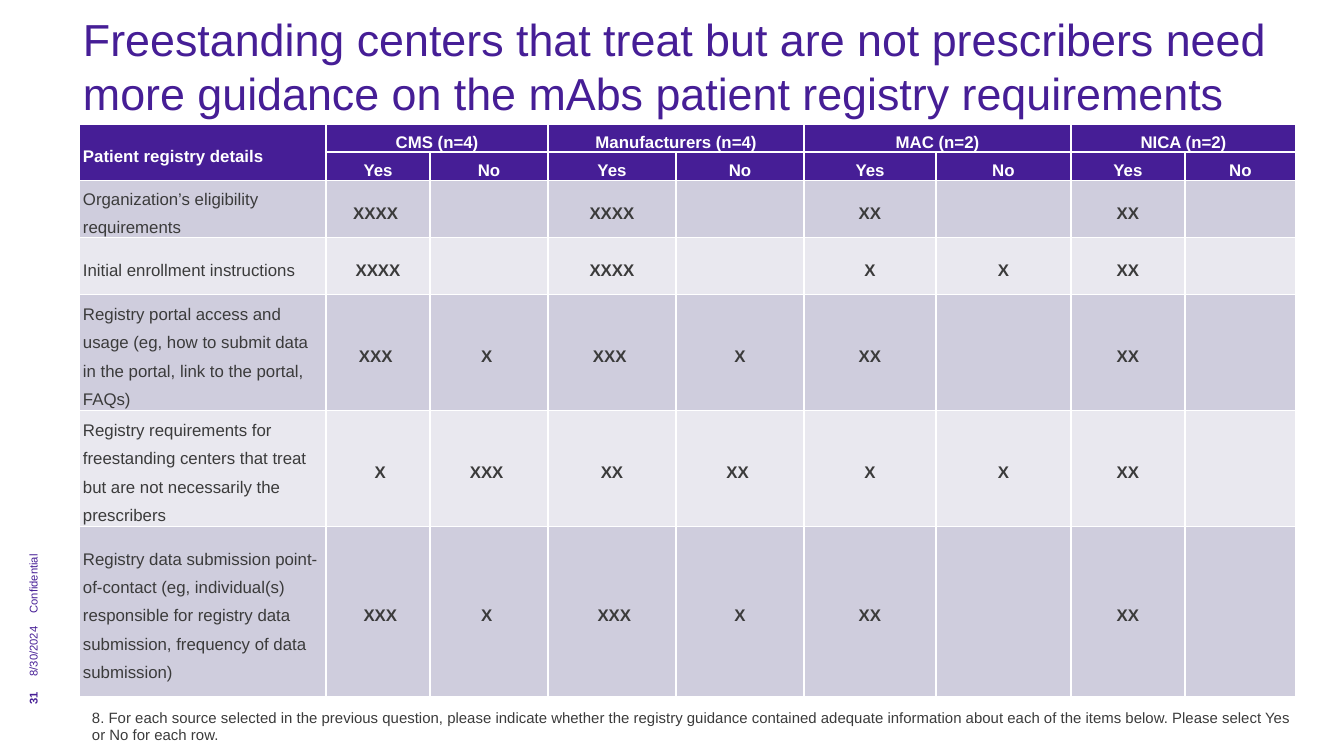
from lxml import etree
from pptx import Presentation
from pptx.dml.color import RGBColor
from pptx.enum import text
from pptx.oxml.ns import qn
from pptx.util import Pt

PX = 914400 / 134.4  # EMU in one px

THEME = {
    "font": "Arial",
    "purple": RGBColor.from_string("461E96"),
    "ink": RGBColor.from_string("3B3B3B"),
    "white": RGBColor.from_string("FFFFFF"),
    "bands": [RGBColor.from_string("CFCDDD"), RGBColor.from_string("E9E8EF")],
    "title": Pt(24), "cell": Pt(9), "note": Pt(8), "footer": Pt(6),
    "cell_line": Pt(15.1),
}


def px(n):
    return round(n * PX)


def write(tf, words, size, color, bold=False, **para):
    p = tf.paragraphs[0]
    for name, value in para.items():
        setattr(p, name, value)
    r = p.add_run()
    r.text = words
    r.font.color.rgb = color
    for name, value in {"name": THEME["font"], "size": size, "bold": bold}.items():
        setattr(r.font, name, value)


prs = Presentation()
prs.slide_width, prs.slide_height = px(1344), px(756)
s = prs.slides.add_slide(prs.slide_layouts[6])

# Title, rotated footer and question note
TOP, BOTTOM = text.MSO_ANCHOR.TOP, text.MSO_ANCHOR.BOTTOM
boxes = [
    ((83, 12, 1213, 58), 0, TOP,
     "Freestanding centers that treat but are not prescribers need more guidance "
     "on the mAbs patient registry requirements",
     THEME["title"], THEME["purple"], False, {}),
    ((3, 637, 63, 16), 270, TOP, "8/30/2024", THEME["footer"], THEME["purple"], False, {}),
    ((-94, 477, 257, 16), 270, TOP, "Confidential", THEME["footer"], THEME["purple"], False, {}),
    ((21, 683, 27, 16), 270, TOP, "31", THEME["footer"], THEME["purple"], True, {}),
    ((92, 728, 1210, 16), 0, BOTTOM,
     "8. For each source selected in the previous question, please indicate whether the "
     "registry guidance contained adequate information about each of the items below. "
     "Please select Yes or No for each row.",
     THEME["note"], THEME["ink"], False, {"space_after": Pt(6)}),
]
for place, turn, anchor, words, size, color, bold, para in boxes:
    sp = s.shapes.add_textbox(*map(px, place))
    sp.rotation = turn
    frame = {"word_wrap": True, "vertical_anchor": anchor, "margin_left": 0,
             "margin_right": 0, "margin_top": 0, "margin_bottom": 0}
    for name, value in frame.items():
        setattr(sp.text_frame, name, value)
    write(sp.text_frame, words, size, color, bold, **para)

# Registry table: two header rows, then one row per registry detail
cols = [247, 104, 118, 128, 128, 132, 135, 114, 111]
heights = [28, 28, 57, 57, 116, 116, 170]
rows = [
    ["Patient registry details", "CMS (n=4)", "", "Manufacturers (n=4)", "",
     "MAC (n=2)", "", "NICA (n=2)", ""],
    [""] + ["Yes", "No"] * 4,
    ["Organization’s eligibility requirements",
     "XXXX ", "", "XXXX", "", "XX", "", "XX", ""],
    ["Initial enrollment instructions",
     "XXXX", "", "XXXX", "", "X", "X", "XX", ""],
    ["Registry portal access and usage (eg, how to submit data in the portal, "
     "link to the portal, FAQs)",
     "XXX ", "X ", "XXX ", "X", "XX", "", "XX", ""],
    ["Registry requirements for freestanding centers that treat but are not "
     "necessarily the prescribers",
     " X", "XXX ", "XX", "XX ", "X", "X", "XX", ""],
    ["Registry data submission point-of-contact (eg, individual(s) responsible for "
     "registry data submission, frequency of data submission)",
     " XXX", "X ", " XXX", "X", "XX", "", "XX", ""],
]
table = s.shapes.add_table(len(rows), len(cols), px(79), px(124),
                           px(sum(cols)), px(sum(heights))).table
table.first_row = table.horz_banding = False
for column, width in zip(table.columns, cols):
    column.width = px(width)
for row, height in zip(table.rows, heights):
    row.height = px(height)

cell_format = {"margin_left": px(4), "margin_right": px(4), "margin_top": 0,
               "margin_bottom": 0, "vertical_anchor": text.MSO_ANCHOR.MIDDLE}
for i, row in enumerate(rows):
    header = i < 2
    for j, words in enumerate(row):
        cell = table.cell(i, j)
        for name, value in cell_format.items():
            setattr(cell, name, value)
        # White borders come before the fill in the cell properties
        props = cell._tc.get_or_add_tcPr()
        for side in ("a:lnL", "a:lnR", "a:lnT", "a:lnB"):
            ln = etree.SubElement(props, qn(side), w=str(Pt(1)))
            fill = etree.SubElement(ln, qn("a:solidFill"))
            etree.SubElement(fill, qn("a:srgbClr"), val=str(THEME["white"]))
        cell.fill.solid()
        cell.fill.fore_color.rgb = THEME["purple"] if header else THEME["bands"][i % 2]
        write(cell.text_frame, words, THEME["cell"],
              THEME["white"] if header else THEME["ink"], header or j > 0,
              line_spacing=THEME["cell_line"],
              alignment=text.PP_ALIGN.CENTER if j else text.PP_ALIGN.LEFT)

# Merged headers
table.cell(0, 0).merge(table.cell(1, 0))
for j in range(1, len(cols), 2):
    table.cell(0, j).merge(table.cell(0, j + 1))

prs.save("out.pptx")
